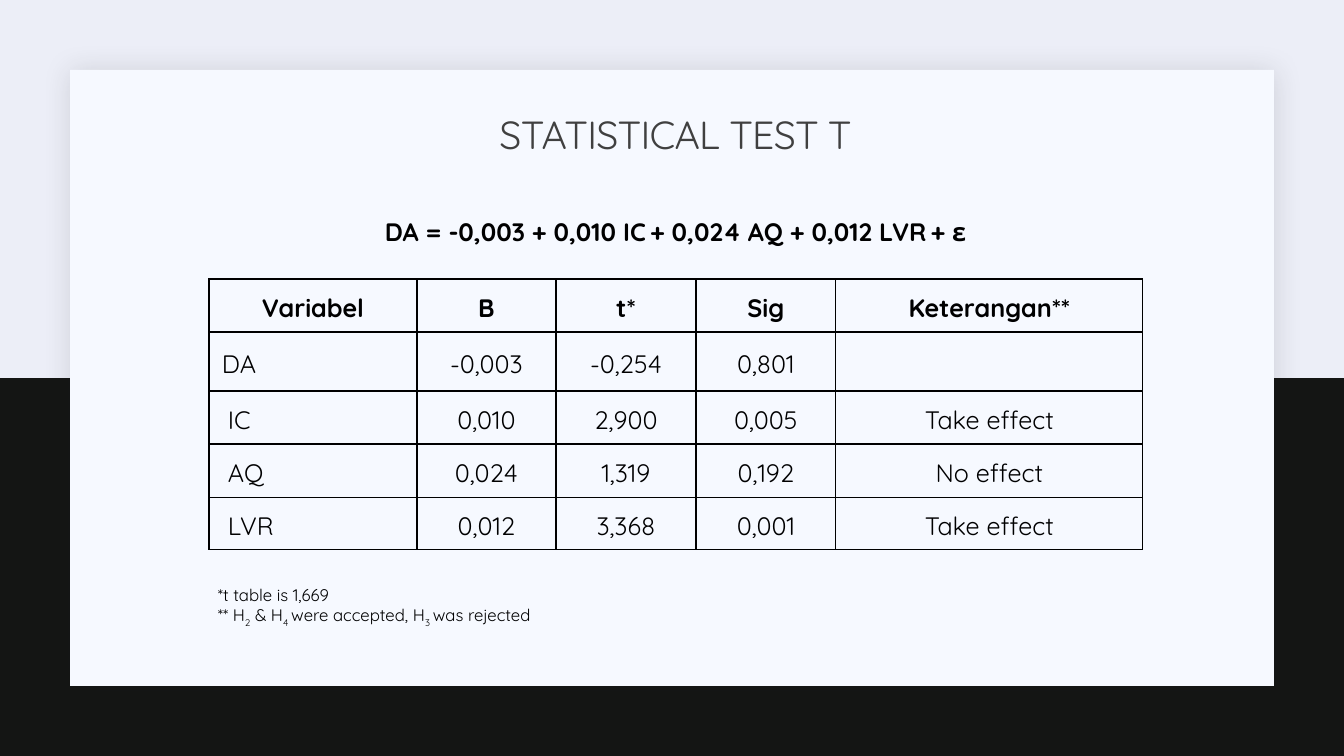
from lxml.etree import SubElement
from pptx import Presentation
from pptx.dml.color import RGBColor
from pptx.enum.shapes import MSO_SHAPE
from pptx.enum.text import MSO_ANCHOR, PP_ALIGN
from pptx.oxml.ns import qn
from pptx.util import Pt

EMU_PER_PX = 914400 / 100.8
FONT = "Quicksand"
BLACK = "000000"
COLUMN_WIDTHS = [208, 139, 140, 140, 307]
ROW_HEIGHTS = [53, 59, 53, 54, 52]
ROWS = [
    ["Variabel", "B", "t*", "Sig", "Keterangan**"],
    ["DA", "-0,003", "-0,254", "0,801", ""],
    ["IC", "0,010", "2,900", "0,005", "Take effect"],
    ["AQ", "0,024", "1,319", "0,192", "No effect"],
    ["LVR", "0,012", "3,368", "0,001", "Take effect"],
]
FORMULA = [
    ("DA = -0,003 + 0,010 IC", False), (" ", True),
    ("+ 0,024 AQ + 0,012 LVR", False), (" ", True), ("+ ε", False),
]
HYPOTHESIS_NOTE = [
    ("** H", False), ("2", True), (" & H", False), ("4 ", True),
    ("were accepted, H", False), ("3 ", True), ("was rejected", False),
]


def px(length):
    return round(length * EMU_PER_PX)


def color(value):
    return RGBColor.from_string(value)


def write(paragraph, text, size=18, fill=BLACK, bold=False, align=None,
          line_spacing=None, subscript=False, tracking=None):
    run = paragraph.add_run()
    run.text = text
    run.font.name = FONT
    run.font.size = Pt(size)
    run.font.bold = bold
    run.font.color.rgb = color(fill)
    properties = run.font._element
    if subscript:
        properties.set("baseline", "-25000")
    if tracking is not None:
        properties.set("spc", str(tracking))
    if align is not None:
        paragraph.alignment = align
    if line_spacing is not None:
        paragraph.line_spacing = line_spacing


def write_pieces(paragraph, pieces, **text_format):
    for text, subscript in pieces:
        write(paragraph, text, subscript=subscript, **text_format)


def add_panel(slide, left, top, width, height, fill):
    panel = slide.shapes.add_shape(
        MSO_SHAPE.RECTANGLE, px(left), px(top), px(width), px(height))
    panel.shadow.inherit = False
    panel.fill.solid()
    panel.fill.fore_color.rgb = color(fill)
    panel.line.fill.background()
    return panel


def add_soft_shadow(shape):
    effects = shape.element.spPr.find(qn("a:effectLst"))
    shadow = SubElement(
        effects, qn("a:outerShdw"), blurRad=str(Pt(20)), dist=str(Pt(2)),
        dir="2700000", algn="ctr", rotWithShape="0")
    shade = SubElement(shadow, qn("a:srgbClr"), val="1F2125")
    SubElement(shade, qn("a:alpha"), val="15000")


def add_title(slide, text):
    title = slide.shapes.title
    title.left, title.top, title.width, title.height = px(121), px(105), px(1109), px(64)
    title.text_frame.vertical_anchor = MSO_ANCHOR.MIDDLE
    write(title.text_frame.paragraphs[0], text, size=28, fill="404040",
          align=PP_ALIGN.CENTER, line_spacing=0.9, tracking=-50)
    title.element.getparent().append(title.element)


def add_text_frame(slide, left, top, width, height):
    box = slide.shapes.add_textbox(px(left), px(top), px(width), px(height))
    box.text_frame.word_wrap = True
    return box.text_frame


def set_borders(cell):
    properties = cell._tc.get_or_add_tcPr()
    for position, side in enumerate(["a:lnL", "a:lnR", "a:lnT", "a:lnB"]):
        border = SubElement(properties, qn(side), w=str(Pt(1)))
        fill = SubElement(border, qn("a:solidFill"))
        SubElement(fill, qn("a:srgbClr"), val=BLACK)
        properties.insert(position, border)


def format_cell(cell, text, row, column):
    is_label = row > 0 and column == 0
    label_margin = 13 if row == 1 else 19
    cell.fill.background()
    cell.vertical_anchor = MSO_ANCHOR.MIDDLE
    cell.margin_left = px(label_margin if is_label else 7)
    cell.margin_right = px(7)
    cell.margin_top = cell.margin_bottom = 0
    set_borders(cell)
    if text:
        write(cell.text_frame.paragraphs[0], text, bold=row == 0, line_spacing=1.15,
              align=PP_ALIGN.LEFT if is_label else PP_ALIGN.CENTER)


def add_results_table(slide, left, top):
    table = slide.shapes.add_table(
        len(ROWS), len(COLUMN_WIDTHS), px(left), px(top),
        px(sum(COLUMN_WIDTHS)), px(sum(ROW_HEIGHTS))).table
    table.horz_banding = False
    table.first_row = False
    for column, width in zip(table.columns, COLUMN_WIDTHS):
        column.width = px(width)
    for row, height in zip(table.rows, ROW_HEIGHTS):
        row.height = px(height)
    for row, texts in enumerate(ROWS):
        for column, text in enumerate(texts):
            format_cell(table.cell(row, column), text, row, column)


def add_notes_below_table(slide):
    frame = add_text_frame(slide, 208, 580, 387, 50)
    write(frame.paragraphs[0], "*t table is 1,669", size=12)
    write_pieces(frame.add_paragraph(), HYPOTHESIS_NOTE, size=12)


def add_formula(slide):
    frame = add_text_frame(slide, 372, 209, 607, 30)
    frame.margin_left = frame.margin_right = 0
    paragraph = frame.paragraphs[0]
    paragraph.space_after = Pt(8)
    write_pieces(paragraph, FORMULA, bold=True, align=PP_ALIGN.CENTER, line_spacing=1.07)


def main():
    presentation = Presentation()
    presentation.slide_width, presentation.slide_height = px(1344), px(756)
    slide = presentation.slides.add_slide(presentation.slide_layouts[5])
    slide.background.fill.solid()
    slide.background.fill.fore_color.rgb = color("ECEEF7")
    add_panel(slide, 0, 378, 1344, 378, "141514")
    add_soft_shadow(add_panel(slide, 70, 70, 1204, 616, "F6F9FF"))
    add_title(slide, "STATISTICAL TEST T")
    add_results_table(slide, 209, 279)
    add_notes_below_table(slide)
    add_formula(slide)
    presentation.save("out.pptx")


if __name__ == "__main__":
    main()
